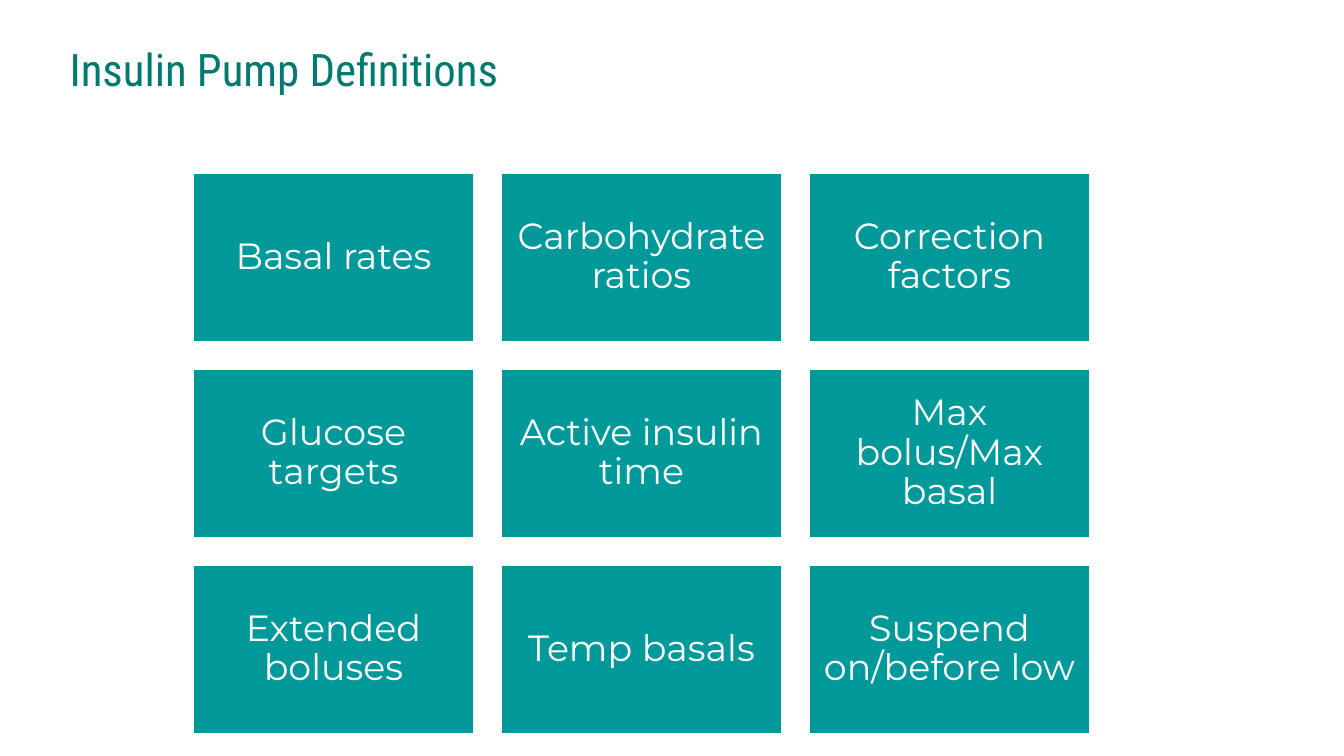
from pptx import Presentation
from pptx.dml.color import RGBColor
from pptx.enum import shapes, text
from pptx.util import Pt

DEFINITIONS = [
    ["Basal rates", "Carbohydrate ratios", "Correction factors"],
    ["Glucose targets", "Active insulin time", "Max bolus/Max basal"],
    ["Extended boluses", "Temp basals", "Suspend on/before low"],
]
TILE_WIDTH, TILE_HEIGHT, GAP = 200, 120, 20
GRID_LEFT, GRID_TOP = 138.3, 123.8


def colour(hex_value):
    return RGBColor.from_string(hex_value)


def set_attributes(target, values):
    for name, value in values.items():
        setattr(target, name, value)


def write_text(shape, wording, font_name, size, hex_value, inset, paragraph_format):
    horizontal, vertical = inset
    frame = shape.text_frame
    set_attributes(frame, {
        "word_wrap": True,
        "vertical_anchor": text.MSO_ANCHOR.MIDDLE,
        "margin_left": Pt(horizontal),
        "margin_right": Pt(horizontal),
        "margin_top": Pt(vertical),
        "margin_bottom": Pt(vertical),
    })
    paragraph = frame.paragraphs[0]
    paragraph.text = wording
    set_attributes(paragraph, paragraph_format)
    set_attributes(paragraph.font, {"name": font_name, "size": Pt(size)})
    paragraph.font.color.rgb = colour(hex_value)


def add_title(slide, wording):
    box = slide.shapes.add_textbox(Pt(40.3), Pt(32.4), Pt(592), Pt(36))
    write_text(box, wording, "Roboto Condensed", 32, "00796E", (9.4, 5),
               {"alignment": text.PP_ALIGN.LEFT, "line_spacing": Pt(35.8)})


def add_tile(slide, wording, left, top):
    tile = slide.shapes.add_shape(shapes.MSO_SHAPE.RECTANGLE, Pt(left), Pt(top),
                                  Pt(TILE_WIDTH), Pt(TILE_HEIGHT))
    tile.shadow.inherit = False
    tile.fill.solid()
    tile.fill.fore_color.rgb = colour("009999")
    tile.line.color.rgb = colour("FFFFFF")
    tile.line.width = Pt(1)
    write_text(tile, wording, "Montserrat", 26, "FFFFFF", (7.8, 7.8),
               {"alignment": text.PP_ALIGN.CENTER, "line_spacing": 0.9})


def main():
    presentation = Presentation()
    set_attributes(presentation, {"slide_width": Pt(960), "slide_height": Pt(540)})
    slide = presentation.slides.add_slide(presentation.slide_layouts[6])
    for row, definitions in enumerate(DEFINITIONS):
        for column, definition in enumerate(definitions):
            add_tile(slide, definition,
                     GRID_LEFT + column * (TILE_WIDTH + GAP),
                     GRID_TOP + row * (TILE_HEIGHT + GAP))
    add_title(slide, "Insulin Pump Definitions")
    presentation.save("out.pptx")


if __name__ == "__main__":
    main()
